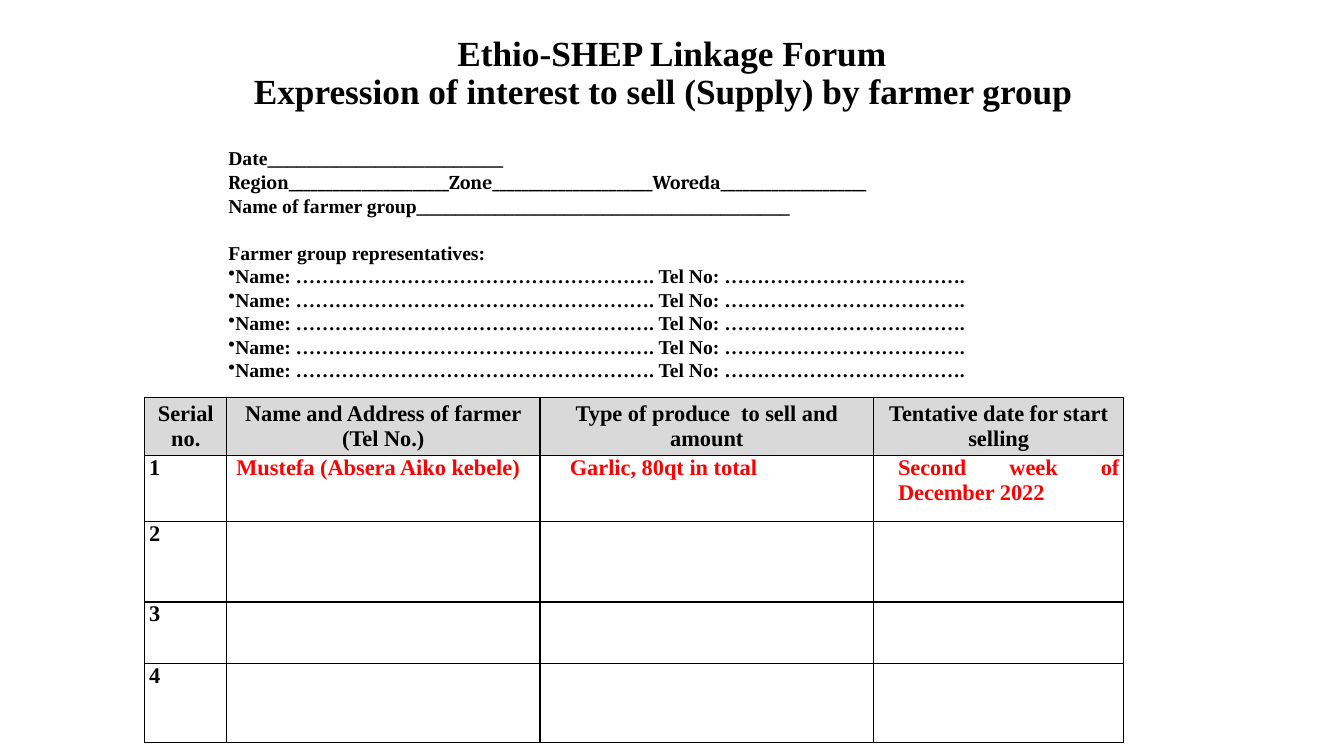
"""Build the farmer group expression of interest form slide."""
from typing import NamedTuple

from lxml.etree import SubElement
from pptx import Presentation
from pptx.dml.color import RGBColor
from pptx.enum.text import MSO_ANCHOR, PP_ALIGN
from pptx.oxml.ns import qn
from pptx.slide import Slide
from pptx.table import _Cell
from pptx.text.text import TextFrame, _Paragraph
from pptx.util import Pt

BLACK = RGBColor(0x00, 0x00, 0x00)
RED = RGBColor(0xFF, 0x00, 0x00)
HEADER_GREY = RGBColor(0xD9, 0xD9, 0xD9)
SERIF = "Times New Roman"
REPRESENTATIVE = "Name: ………………………………………………. Tel No: ………………………………."


class Line(NamedTuple):
    text: str
    font: str = SERIF
    bullet: bool = False
    space_before: float = 0
    right_margin: float = 0


class TextBlock(NamedTuple):
    left: float
    top: float
    width: float
    height: float
    size: float
    spacing: float
    alignment: PP_ALIGN
    lines: list[Line]


class Entry(NamedTuple):
    text: str = ""
    color: RGBColor = BLACK
    alignment: PP_ALIGN = PP_ALIGN.LEFT
    indent: float = 0
    header: bool = False


def header(text: str) -> Entry:
    return Entry(text, alignment=PP_ALIGN.CENTER, header=True)


def example(text: str, indent: float) -> Entry:
    return Entry(text, RED, PP_ALIGN.JUSTIFY, indent)


TITLE = TextBlock(48, 21.6, 864, 90, 25.2, 27.1, PP_ALIGN.CENTER, [
    Line("Ethio-SHEP Linkage Forum"),
    Line("Expression of interest to sell (Supply) by farmer group", right_margin=12.6),
])
DETAILS = TextBlock(156, 101, 588, 190, 14, 16.8, PP_ALIGN.LEFT, [
    Line("Date" + "_" * 24),
    Line("Region" + "_" * 22 + "Zone" + "_" * 22 + "Woreda" + "_" * 20, font="Cambria"),
    Line("Name of farmer group" + "_" * 38),
    Line("Farmer group representatives:", space_before=16.8),
    *[Line(REPRESENTATIVE, bullet=True)] * 5,
])

TABLE_LEFT, TABLE_TOP = 103.5, 283.7
COLUMN_WIDTHS = [58.4, 223.8, 238.4, 178.6]
ROW_HEIGHTS = [41.6, 47, 57.7, 43.8, 56.7]
ENTRIES = [
    [header("Serial no."), header("Name and Address of farmer\n(Tel No.)"),
     header("Type of produce  to sell and amount"), header("Tentative date for start selling")],
    [Entry("1"), example("Mustefa (Absera Aiko kebele)", 4),
     example("Garlic, 80qt in total", 18.4), example("Second week of December 2022", 14.4)],
    *[[Entry(number), Entry(), Entry(), Entry()] for number in "234"],
]


def format_runs(paragraph: _Paragraph, size: float, color: RGBColor, font: str = SERIF) -> None:
    for run in paragraph.runs:
        run.font.name = font
        run.font.size = Pt(size)
        run.font.bold = True
        run.font.color.rgb = color


def fill_line(paragraph: _Paragraph, line: Line, block: TextBlock) -> None:
    paragraph.text = line.text
    paragraph.alignment = block.alignment
    paragraph.line_spacing = Pt(block.spacing)
    paragraph.space_before = Pt(line.space_before)
    format_runs(paragraph, block.size, BLACK, line.font)
    properties = paragraph._p.get_or_add_pPr()
    properties.set("marR", str(Pt(line.right_margin)))
    if line.bullet:
        properties.set("marL", "0")
        properties.set("indent", "0")
        SubElement(properties, qn("a:buChar")).set("char", "•")


def add_text_block(slide: Slide, block: TextBlock) -> None:
    box = slide.shapes.add_textbox(
        Pt(block.left), Pt(block.top), Pt(block.width), Pt(block.height))
    text_frame: TextFrame = box.text_frame
    text_frame.word_wrap = True
    for index, line in enumerate(block.lines):
        paragraph = text_frame.add_paragraph() if index else text_frame.paragraphs[0]
        fill_line(paragraph, line, block)


def add_borders(cell: _Cell) -> None:
    properties = cell._tc.get_or_add_tcPr()
    for position, side in enumerate(("a:lnL", "a:lnR", "a:lnT", "a:lnB")):
        border = SubElement(properties, qn(side))
        properties.insert(position, border)
        border.set("w", str(Pt(1)))
        fill = SubElement(border, qn("a:solidFill"))
        SubElement(fill, qn("a:srgbClr")).set("val", str(BLACK))


def fill_cell(cell: _Cell, entry: Entry) -> None:
    cell.margin_left = cell.margin_right = Pt(3)
    cell.margin_top = cell.margin_bottom = Pt(0)
    cell.vertical_anchor = MSO_ANCHOR.MIDDLE if entry.header else MSO_ANCHOR.TOP
    if entry.header:
        cell.fill.solid()
        cell.fill.fore_color.rgb = HEADER_GREY
    else:
        cell.fill.background()
    add_borders(cell)
    cell.text_frame.text = entry.text
    for paragraph in cell.text_frame.paragraphs:
        paragraph.alignment = entry.alignment
        paragraph._p.get_or_add_pPr().set("marL", str(Pt(entry.indent)))
        format_runs(paragraph, 16, entry.color)


def add_supply_table(slide: Slide) -> None:
    table = slide.shapes.add_table(
        len(ROW_HEIGHTS), len(COLUMN_WIDTHS), Pt(TABLE_LEFT), Pt(TABLE_TOP),
        Pt(sum(COLUMN_WIDTHS)), Pt(sum(ROW_HEIGHTS))).table
    table.first_row = table.horz_banding = False
    for column, width in zip(table.columns, COLUMN_WIDTHS):
        column.width = Pt(width)
    for row, height, entries in zip(table.rows, ROW_HEIGHTS, ENTRIES):
        row.height = Pt(height)
        for cell, entry in zip(row.cells, entries):
            fill_cell(cell, entry)


def main() -> None:
    presentation = Presentation()
    presentation.slide_width = Pt(960)
    presentation.slide_height = Pt(540)
    slide = presentation.slides.add_slide(presentation.slide_layouts[6])
    add_text_block(slide, TITLE)
    add_supply_table(slide)
    add_text_block(slide, DETAILS)
    presentation.save("out.pptx")


if __name__ == "__main__":
    main()
